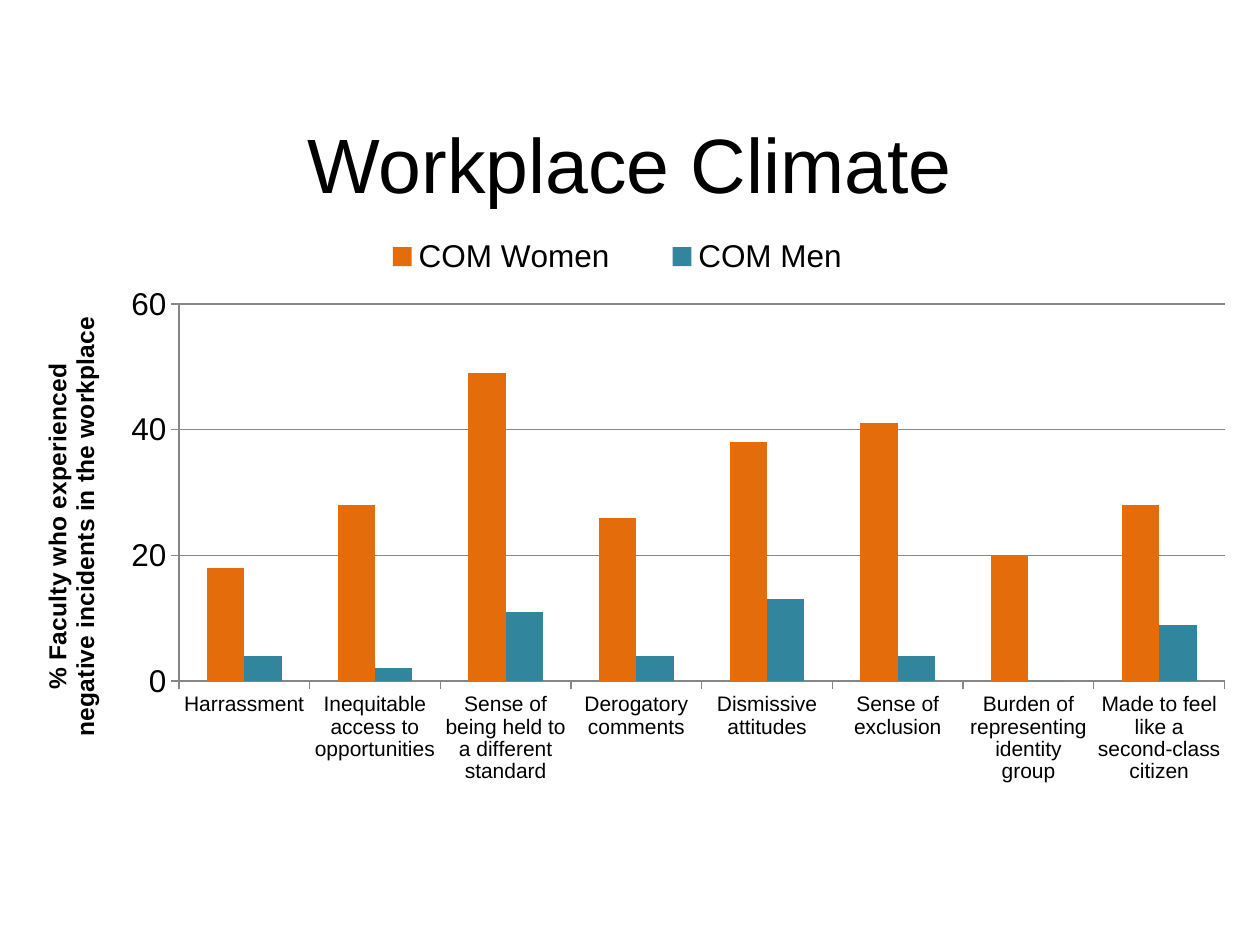
from dataclasses import dataclass

from lxml.etree import SubElement
from pptx import Presentation
from pptx.chart.data import CategoryChartData
from pptx.dml.color import RGBColor
from pptx.enum.chart import XL_CHART_TYPE, XL_LEGEND_POSITION, XL_TICK_MARK
from pptx.enum.text import MSO_ANCHOR, PP_ALIGN
from pptx.oxml import parse_xml
from pptx.oxml.ns import nsdecls, qn
from pptx.util import Inches, Pt


@dataclass(frozen=True)
class Theme:
    font: str = "Arial"
    ink: RGBColor = RGBColor(0x00, 0x00, 0x00)
    rule: RGBColor = RGBColor(0x86, 0x86, 0x86)
    women: RGBColor = RGBColor(0xE4, 0x6C, 0x0A)
    men: RGBColor = RGBColor(0x31, 0x85, 0x9C)
    heading: Pt = Pt(44)
    chart: Pt = Pt(18)
    axis_title: Pt = Pt(14)
    category: Pt = Pt(12)


theme = Theme()


def set_layout(part, index, target=None, **place):
    for old in part.findall(qn("c:layout")):
        part.remove(old)
    layout = parse_xml(f"<c:layout {nsdecls('c')}><c:manualLayout/></c:layout>")
    manual = layout[0]
    if target:
        SubElement(manual, qn("c:layoutTarget")).set("val", target)
    for side in ("x", "y"):
        SubElement(manual, qn(f"c:{side}Mode")).set("val", "edge")
    for key, value in place.items():
        SubElement(manual, qn(f"c:{key}")).set("val", str(value))
    part.insert(index, layout)


def set_font(font, size, bold=False):
    font.name = theme.font
    font.size = size
    font.bold = bold
    font.color.rgb = theme.ink


presentation = Presentation()
presentation.slide_width = Inches(10)
presentation.slide_height = Inches(7.5)
slide = presentation.slides.add_slide(presentation.slide_layouts[5])

heading = slide.shapes.title
heading.left, heading.top = Inches(0.5), Inches(0.67)
heading.width, heading.height = Inches(9), Inches(1.25)
heading.text_frame.text = "Workplace Climate"
heading.text_frame.vertical_anchor = MSO_ANCHOR.MIDDLE
heading.text_frame.paragraphs[0].alignment = PP_ALIGN.CENTER
set_font(heading.text_frame.paragraphs[0].font, theme.heading)

incidents = CategoryChartData(number_format="0")
incidents.categories = [
    "Harrassment",
    "Inequitable access to opportunities",
    "Sense of being held to a different standard",
    "Derogatory comments",
    "Dismissive attitudes",
    "Sense of exclusion",
    "Burden of representing identity group",
    "Made to feel like a second-class citizen",
]
incidents.add_series("COM Women", [18, 28, 49, 26, 38, 41, 20, 28])
incidents.add_series("COM Men", [4, 2, 11, 4, 13, 4, 0, 9])

climate = slide.shapes.add_chart(
    XL_CHART_TYPE.COLUMN_CLUSTERED,
    Inches(0), Inches(1.17), Inches(10), Inches(5.25), incidents,
).chart
climate.has_title = False
set_font(climate.font, theme.chart)

columns = climate.plots[0]
columns.gap_width = 150
columns.overlap = 0
columns.vary_by_categories = False
for group, colour in zip(columns.series, (theme.women, theme.men)):
    group.format.fill.solid()
    group.format.fill.fore_color.rgb = colour

types = climate.category_axis
percent = climate.value_axis
for axis in (types, percent):
    axis.major_tick_mark = XL_TICK_MARK.OUTSIDE
    axis.minor_tick_mark = XL_TICK_MARK.NONE
    axis.format.line.color.rgb = theme.rule
set_font(types.tick_labels.font, theme.category)
set_font(percent.tick_labels.font, theme.chart)
percent.minimum_scale, percent.maximum_scale, percent.major_unit = 0, 60, 20
percent.has_major_gridlines = True
percent.major_gridlines.format.line.color.rgb = theme.rule

percent_title = percent.axis_title.text_frame
percent_title.text = "% Faculty who experienced\nnegative incidents in the workplace"
for line in percent_title.paragraphs:
    set_font(line.font, theme.axis_title, bold=True)

climate.has_legend = True
climate.legend.position = XL_LEGEND_POSITION.TOP
climate.legend.include_in_layout = False
set_font(climate.legend.font, theme.chart)

plot_area = climate.element.xpath("c:chart/c:plotArea")[0]
set_layout(plot_area, 0, "inner", x=0.142, y=0.237, w=0.83, h=0.57)
set_layout(climate.element.xpath("c:chart/c:legend")[0], 1, x=0.27, y=0.12, w=0.44, h=0.09)
set_layout(plot_area.xpath("c:valAx/c:title")[0], 1, x=0.03, y=0.25)

presentation.save("out.pptx")
